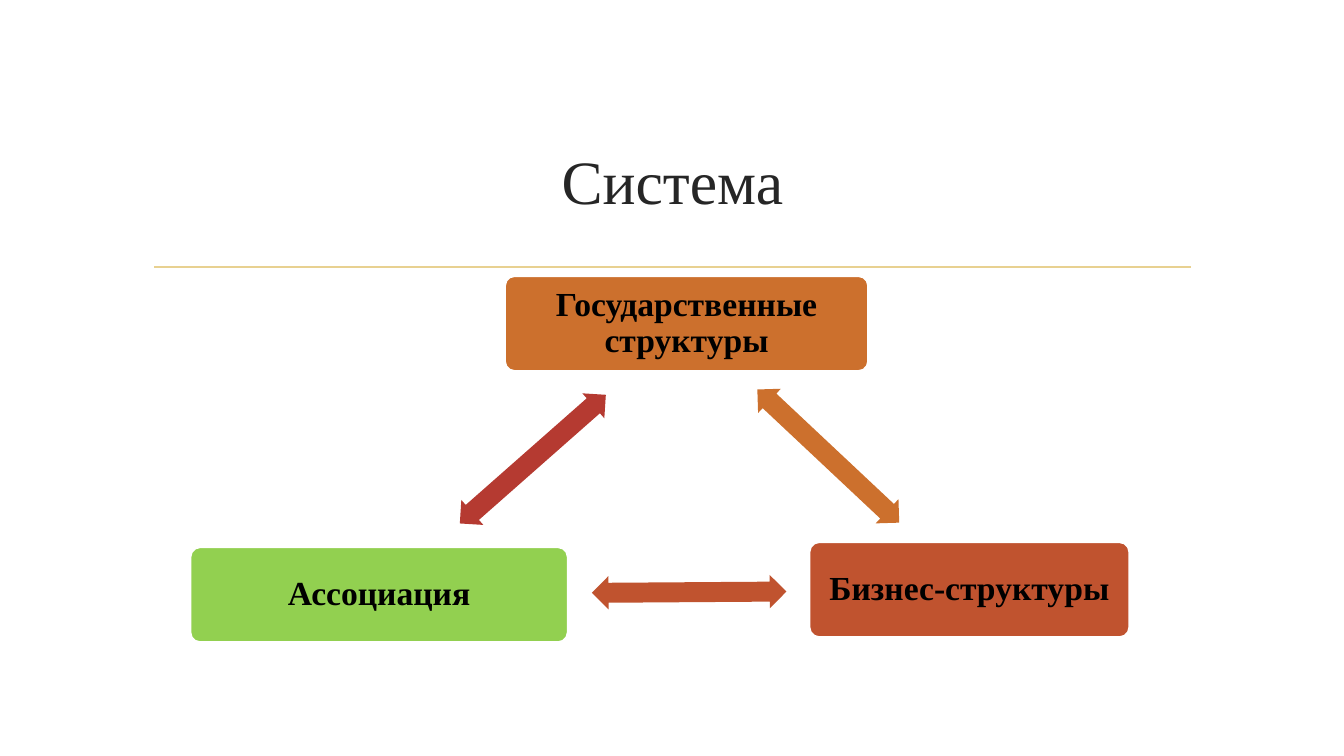
import pptx
import pptx.util
import pptx.dml.color
import pptx.enum.shapes
import pptx.enum.text
import pptx.oxml.ns
import lxml.etree

Inches, Pt = pptx.util.Inches, pptx.util.Pt
MSO = pptx.enum.shapes.MSO_SHAPE
CENTER = pptx.enum.text.PP_ALIGN.CENTER
MIDDLE = pptx.enum.text.MSO_ANCHOR.MIDDLE
COLORS = {"title": "262626", "text": "000000", "white": "FFFFFF", "rule": "E8D191",
          "orange": "CC702D", "rust": "C0532F", "green": "92D050", "red": "B53A31"}


def rgb(name):
    return pptx.dml.color.RGBColor.from_string(COLORS[name])


def write(sp, text, color, fmt):
    tf = sp.text_frame
    tf.word_wrap = True
    tf.vertical_anchor = MIDDLE
    p = tf.paragraphs[0]
    p.alignment = CENTER
    r = p.add_run()
    r.text = text
    for key, value in fmt.items():
        setattr(r.font, key, value)
    r.font.color.rgb = rgb(color)
    return tf


prs = pptx.Presentation()
prs.slide_width, prs.slide_height = Inches(13.33), Inches(7.5)
s = prs.slides.add_slide(prs.slide_layouts[5])

rule = s.shapes.add_connector(pptx.enum.shapes.MSO_CONNECTOR.STRAIGHT,
                              Inches(1.53), Inches(2.65), Inches(11.81), Inches(2.65))
rule.line.color.rgb = rgb("rule")
rule.line.width = Pt(1.25)
lxml.etree.SubElement(rule.element.spPr, pptx.oxml.ns.qn("a:effectLst"))

title = s.shapes.title
title.left, title.top = Inches(1.42), Inches(1.07)
title.width, title.height = Inches(10.5), Inches(1.43)
write(title, "Система", "title", {"name": "Times New Roman", "size": Pt(44), "bold": False})

boxes = [("Государственные структуры", 5.01, 2.74, 3.6, "orange"),
         ("Бизнес-структуры", 8.03, 5.38, 3.17, "rust"),
         ("Ассоциация", 1.89, 5.43, 3.74, "green")]
for text, x, y, w, color in boxes:
    sp = s.shapes.add_shape(MSO.ROUNDED_RECTANGLE, Inches(x), Inches(y), Inches(w), Inches(0.94))
    sp.adjustments[0] = 0.1
    sp.shadow.inherit = False
    sp.fill.solid()
    sp.fill.fore_color.rgb = rgb(color)
    sp.line.color.rgb = rgb("white")
    sp.line.width = Pt(1.25)
    tf = write(sp, text, "text", {"name": "Times New Roman", "size": Pt(24), "bold": True})
    tf.paragraphs[0].line_spacing = 0.9
    for side in ("left", "top", "right", "bottom"):
        setattr(tf, "margin_" + side, Inches(0.1))

arrows = [(7.25, 4.36, 43.2, "orange"), (5.87, 5.71, 179.6, "rust"), (4.32, 4.39, 318.6, "red")]
for x, y, angle, color in arrows:
    sp = s.shapes.add_shape(MSO.LEFT_RIGHT_ARROW, Inches(x), Inches(y), Inches(1.93), Inches(0.33))
    sp.adjustments[0] = 0.6
    sp.adjustments[1] = 0.5
    sp.rotation = angle
    sp.shadow.inherit = False
    sp.fill.solid()
    sp.fill.fore_color.rgb = rgb(color)
    sp.line.fill.background()

prs.save("out.pptx")
